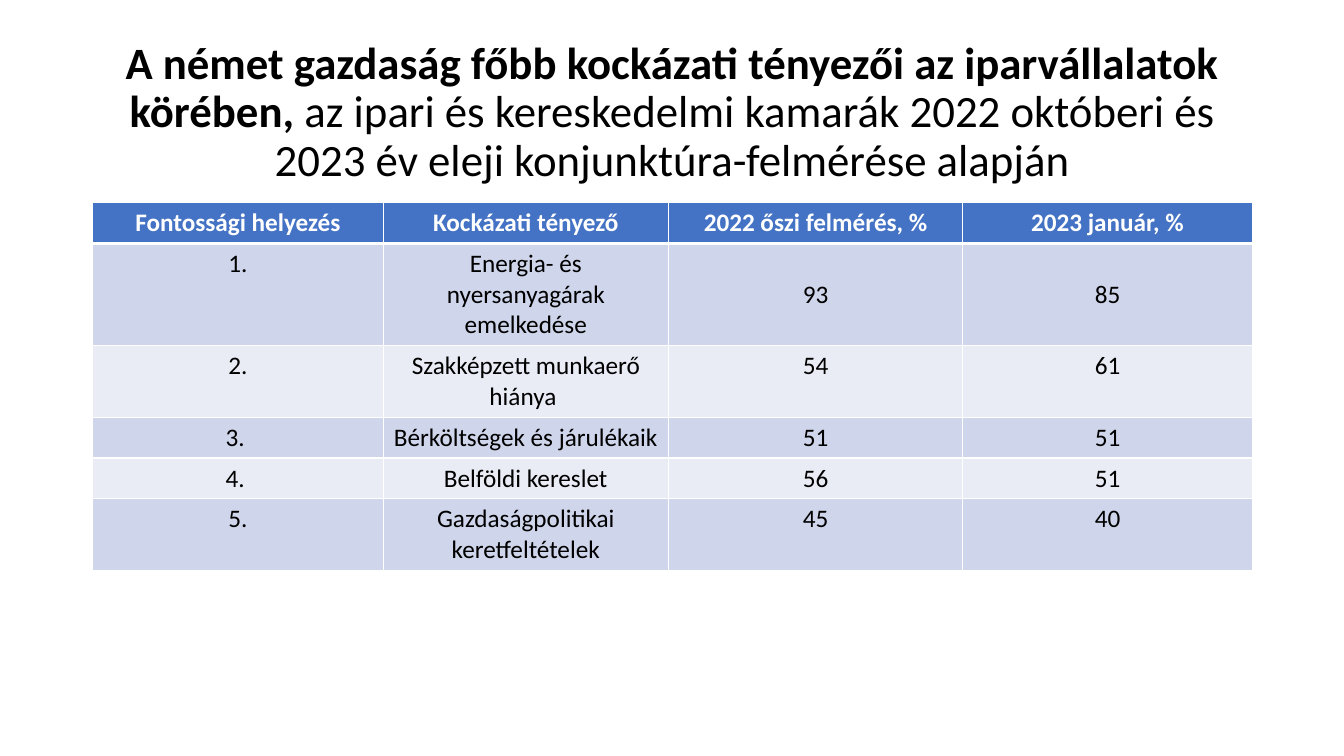
from lxml import etree
from pptx import Presentation
from pptx.dml.color import RGBColor
from pptx.enum.text import MSO_ANCHOR, PP_ALIGN
from pptx.util import Inches, Pt

CENTER = PP_ALIGN.CENTER
TOP, MIDDLE = MSO_ANCHOR.TOP, MSO_ANCHOR.MIDDLE
NS = "http://schemas.openxmlformats.org/drawingml/2006/main"
FONT = "Calibri"
COLORS = {
    "text": "000000",
    "line": "FFFFFF",
    "head": "4472C4",
    "odd": "CFD5EA",
    "even": "E9EBF5",
}
WIDE, HIGH = 13.33, 7.5
LEFT, SPAN = 0.92, 11.5
COLS = [2.88, 2.83, 2.92, 2.87]
LINES = [1, 3, 2, 1, 1, 2]
PAD, LEAD = 0.1, 0.305
TITLE = [
    ("A német gazdaság főbb kockázati tényezői az iparvállalatok körében, ", True),
    ("az ipari és kereskedelmi kamarák 2022 októberi és 2023 év eleji "
     "konjunktúra-felmérése alapján", False),
]
ROWS = [
    ["Fontossági helyezés", "Kockázati tényező", "2022 őszi felmérés, %", "2023 január, %"],
    ["1.", "Energia- és nyersanyagárak emelkedése", "93", "85"],
    ["2.", "Szakképzett munkaerő hiánya ", "54", "61"],
    ["3. ", "Bérköltségek és járulékaik", "51", "51"],
    ["4. ", "Belföldi kereslet", "56", "51"],
    ["5.", "Gazdaságpolitikai keretfeltételek", "45", "40"],
]


def style(para, size, color):
    """Centre a paragraph and set its font."""
    para.alignment = CENTER
    para.font.name = FONT
    para.font.size = Pt(size)
    para.font.color.rgb = RGBColor.from_string(COLORS[color])


def add_title(slide):
    """Add the heading with its bold opening."""
    box = slide.shapes.add_textbox(Inches(LEFT), Inches(0.4), Inches(SPAN), Inches(1.45))
    frame = box.text_frame
    frame.word_wrap = True
    frame.vertical_anchor = MIDDLE
    para = frame.paragraphs[0]
    para.line_spacing = 0.9
    style(para, 32, "text")
    for text, bold in TITLE:
        run = para.add_run()
        run.text = text
        run.font.bold = bold


def edge(cell, head):
    """Draw the four borders, thicker below the header."""
    props = cell._tc.get_or_add_tcPr()
    for spot, side in enumerate("LRTB"):
        width = 3 if head and side == "B" else 1
        line = etree.Element(f"{{{NS}}}ln{side}", w=str(Pt(width)))
        fill = etree.SubElement(line, f"{{{NS}}}solidFill")
        etree.SubElement(fill, f"{{{NS}}}srgbClr", val=COLORS["line"])
        props.insert(spot, line)


def fill_cell(cell, text, row, col):
    """Write and paint one table cell."""
    head = row == 0
    cell.text = text
    para = cell.text_frame.paragraphs[0]
    style(para, 18, "line" if head else "text")
    para.font.bold = head
    cell.vertical_anchor = MIDDLE if row == 1 and col > 1 else TOP
    shade = "head" if head else "odd" if row % 2 else "even"
    cell.fill.solid()
    cell.fill.fore_color.rgb = RGBColor.from_string(COLORS[shade])
    edge(cell, head)


def add_grid(slide):
    """Add the table of risk factors."""
    highs = [PAD + LEAD * count for count in LINES]
    frame = slide.shapes.add_table(
        len(ROWS), len(COLS), Inches(LEFT), Inches(2.01), Inches(SPAN), Inches(sum(highs)))
    table = frame.table
    for col, width in zip(table.columns, COLS):
        col.width = Inches(width)
    for row, high in zip(table.rows, highs):
        row.height = Inches(high)
    for row, texts in enumerate(ROWS):
        for col, text in enumerate(texts):
            fill_cell(table.cell(row, col), text, row, col)


def main():
    """Build the slide and save it."""
    deck = Presentation()
    deck.slide_width, deck.slide_height = Inches(WIDE), Inches(HIGH)
    slide = deck.slides.add_slide(deck.slide_layouts[6])
    add_title(slide)
    add_grid(slide)
    deck.save("out.pptx")


if __name__ == "__main__":
    main()
